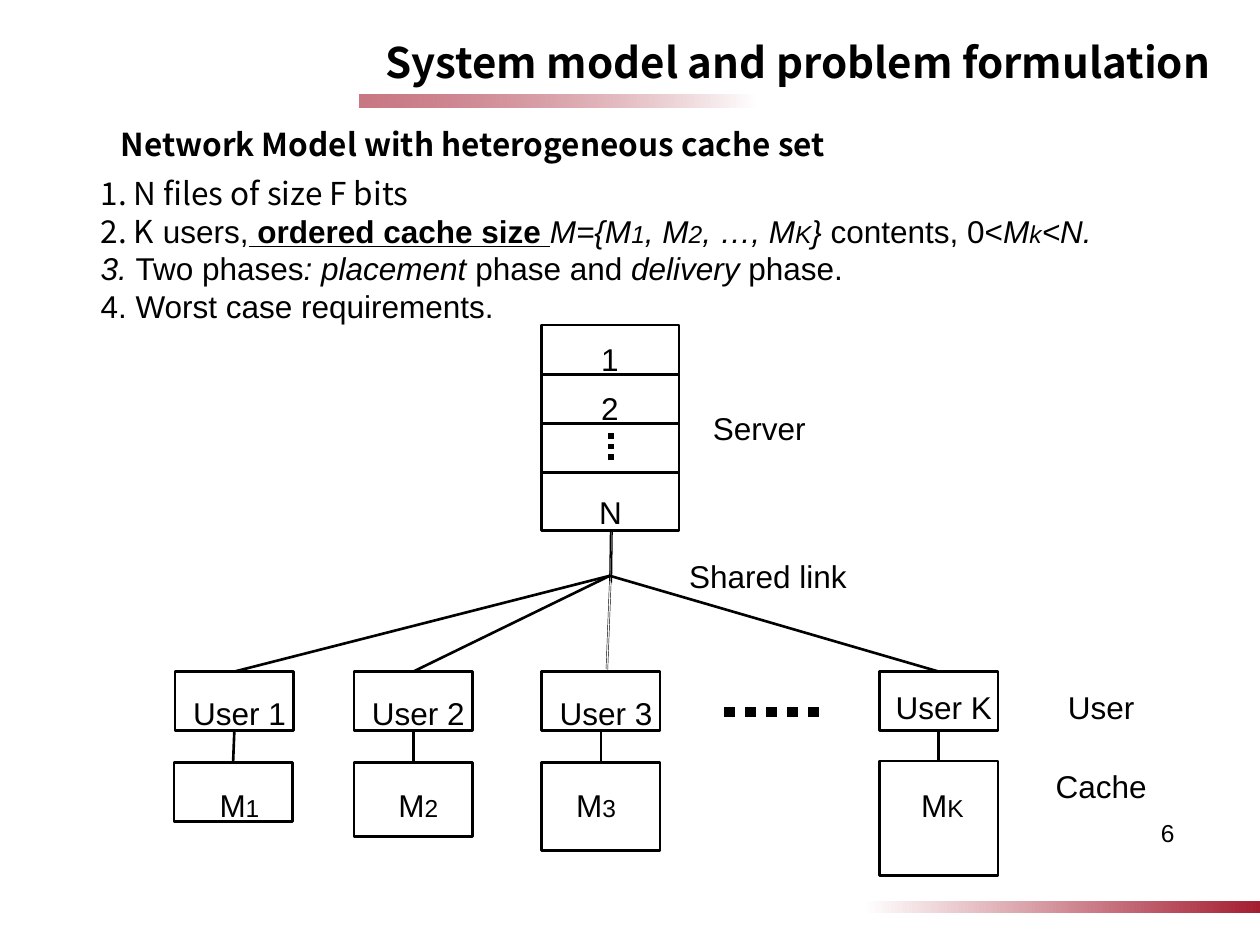
from dataclasses import dataclass

from lxml import etree
from pptx import Presentation
from pptx import util as u
from pptx.dml.color import RGBColor
from pptx.enum import dml, shapes, text
from pptx.oxml.ns import qn

COLORS = {"ink": "000000", "paper": "FFFFFF", "crimson": "A41E31"}
SANS, HEADING = "Arial", "Noto Sans CJK SC"
LEFT, CENTER, RIGHT = text.PP_ALIGN.LEFT, text.PP_ALIGN.CENTER, text.PP_ALIGN.RIGHT


@dataclass(frozen=True)
class Span:
    text: str
    size: int = 18
    font: str = SANS
    bold: bool = False
    italic: bool = False
    underline: bool = False


@dataclass(frozen=True)
class User:
    name: str
    left: float
    label_top: float
    cache_left: float
    cache_top: float
    cache_height: float
    cache_label_left: float


def rgb(name: str) -> RGBColor:
    return RGBColor.from_string(COLORS[name])


def write(para, spans: list[Span], align=LEFT, spacing: float = 1.0) -> None:
    para.alignment = align
    para.line_spacing = spacing
    for span in spans:
        run = para.add_run()
        run.text = span.text
        font = run.font
        font.size, font.name = u.Pt(span.size), span.font
        font.bold, font.italic, font.underline = span.bold, span.italic, span.underline
        font.color.rgb = rgb("ink")


def add_text(page, left: float, top: float, width: float, height: float,
             lines: list[list[Span]], align=LEFT, spacing: float = 1.0, wrap: bool = True):
    box = page.shapes.add_textbox(u.Inches(left), u.Inches(top), u.Inches(width), u.Inches(height))
    frame = box.text_frame
    frame.word_wrap = wrap
    frame.auto_size = text.MSO_AUTO_SIZE.SHAPE_TO_FIT_TEXT
    for index, spans in enumerate(lines):
        write(frame.add_paragraph() if index else frame.paragraphs[0], spans, align, spacing)
    return box


def add_label(page, left: float, top: float, width: float, *spans: Span, align=CENTER) -> None:
    add_text(page, left, top, width, 0.5, [list(spans)], align, 1.5)


def add_box(page, left: float, top: float, width: float, height: float):
    box = page.shapes.add_shape(shapes.MSO_SHAPE.RECTANGLE, u.Inches(left), u.Inches(top),
                                u.Inches(width), u.Inches(height))
    box.shadow.inherit = False
    box.fill.solid()
    box.fill.fore_color.rgb = rgb("paper")
    box.line.color.rgb = rgb("ink")
    box.line.width = u.Pt(1.5)
    return box


def add_bar(page, left: float, top: float, rotation: int = 0, opacity: int = 100) -> None:
    bar = add_box(page, left, top, 3.15, 0.1)
    bar.rotation = rotation
    bar.line.fill.background()
    bar.fill.gradient()
    bar.fill.gradient_angle = 0
    for stop, position, color in zip(bar.fill.gradient_stops, (0, 1), ("paper", "crimson")):
        stop.position = position
        stop.color.rgb = rgb(color)
    if opacity < 100:
        last = bar._element.spPr.findall(".//" + qn("a:srgbClr"))[-1]
        etree.SubElement(last, qn("a:alpha"), val=str(opacity * 1000))


def add_line(page, start: tuple[float, float], end: tuple[float, float], weight: float = 1.5,
             dotted: bool = False, shadow: bool = False):
    line = page.shapes.add_connector(shapes.MSO_CONNECTOR.STRAIGHT,
                                     *(u.Inches(value) for value in start + end))
    line.line.color.rgb = rgb("ink")
    line.line.width = u.Pt(weight)
    if dotted:
        line.line.dash_style = dml.MSO_LINE.ROUND_DOT
    effects = etree.SubElement(line._element.spPr, qn("a:effectLst"))
    if shadow:
        outer = etree.SubElement(effects, qn("a:outerShdw"), dist=str(u.Pt(1.4)), dir="2700000")
        etree.SubElement(outer, qn("a:srgbClr"), val=COLORS["ink"])
    return line


def add_server(page):
    left, top, width, step = 4.3, 2.58, 1.09, 0.39
    server = add_box(page, left, 2.65, width, 1.56)
    frame = server.text_frame
    frame.vertical_anchor = text.MSO_ANCHOR.BOTTOM
    frame.margin_bottom = 0
    write(frame.paragraphs[0], [Span("N")], CENTER)
    for row in range(3):
        add_box(page, left, top + row * step, width, step)
    for row, name in enumerate("12"):
        add_label(page, 4.37, 2.5 + row * step, 0.94, Span(name))
    add_line(page, (4.85, 3.44), (4.85, 3.68), 3, dotted=True)
    return server


def add_user(page, user: User, hub: tuple[float, float]) -> None:
    width, top, height = 0.94, 5.33, 0.47
    station = add_box(page, user.left, top, width, height)
    cache = add_box(page, user.cache_left, user.cache_top, width, user.cache_height)
    middle = user.left + width / 2
    drop = add_line(page, (middle, top + height), (middle, user.cache_top))
    drop.begin_connect(station, 2)
    drop.end_connect(cache, 0)
    if user.name == "3":
        add_line(page, (4.81, 5.31), (4.84, 4.53), 0.25, shadow=True)
    else:
        add_line(page, hub, (middle, top)).end_connect(station, 0)
    add_label(page, user.left, user.label_top, 1.02, Span(f"User {user.name}"))
    add_label(page, user.cache_label_left, 6.04, 1.02, Span("M"), Span(user.name, 14))


def main() -> None:
    deck = Presentation()
    deck.slide_width, deck.slide_height = u.Inches(10), u.Inches(7.5)
    page = deck.slides.add_slide(deck.slide_layouts[6])

    # Accent bars and page number
    add_bar(page, 2.85, 0.75, rotation=180, opacity=60)
    add_bar(page, 6.85, 7.15)
    add_text(page, 7.09, 6.44, 2.33, 0.52, [[Span("6", 14)]], RIGHT)

    # Title, heading and numbered points
    add_text(page, 2.96, 0.24, 6.95, 0.5,
             [[Span("System model and problem formulation", 24, HEADING, bold=True)]])
    add_text(page, 0.86, 0.94, 6.07, 0.4,
             [[Span("Network Model with heterogeneous cache set", 18, HEADING, bold=True)]],
             wrap=False)
    cache_set = [Span(part, size, italic=True) for part, size in (
        ("M={M", 18), ("1", 14), (", M", 18), ("2", 14), (", …, M", 18), ("K", 14), ("}", 18))]
    points = [
        [Span("1. N files of size F bits", font=HEADING)],
        [Span("2. K", font=HEADING), Span(" users,"),
         Span(" ordered cache size ", bold=True, underline=True), *cache_set,
         Span(" contents, 0<"), Span("M", italic=True), Span("k", 14, italic=True),
         Span("<N.", italic=True)],
        [Span("3. ", italic=True), Span("Two phases"), Span(": placement ", italic=True),
         Span("phase and "), Span("delivery", italic=True), Span(" phase.")],
        [Span("4. Worst case requirements.")],
    ]
    add_text(page, 0.7, 1.33, 8.16, 1.92, points, wrap=False)

    # Server and shared link
    hub = (4.84, 4.57)
    server = add_server(page)
    trunk = add_line(page, (4.84, 4.21), (4.84, 4.61), 0.75, shadow=True)
    trunk.begin_connect(server, 2)

    # Users with their caches
    for user in (User("1", 1.39, 5.31, 1.38, 6.05, 0.47, 1.39),
                 User("2", 2.81, 5.31, 2.81, 6.05, 0.59, 2.81),
                 User("3", 4.3, 5.31, 4.3, 6.05, 0.7, 4.22),
                 User("K", 6.98, 5.26, 6.98, 6.04, 0.91, 6.97)):
        add_user(page, user, hub)
    add_line(page, (6.5, 5.65), (5.71, 5.65), 6, dotted=True)

    # Captions
    add_label(page, 5.56, 3.05, 0.94, Span("Server"), align=LEFT)
    add_label(page, 5.23, 4.22, 1.73, Span("Shared link"))
    add_label(page, 8.23, 5.26, 1.02, Span("User"))
    add_label(page, 8.23, 5.89, 1.02, Span("Cache"))

    deck.save("out.pptx")


if __name__ == "__main__":
    main()
